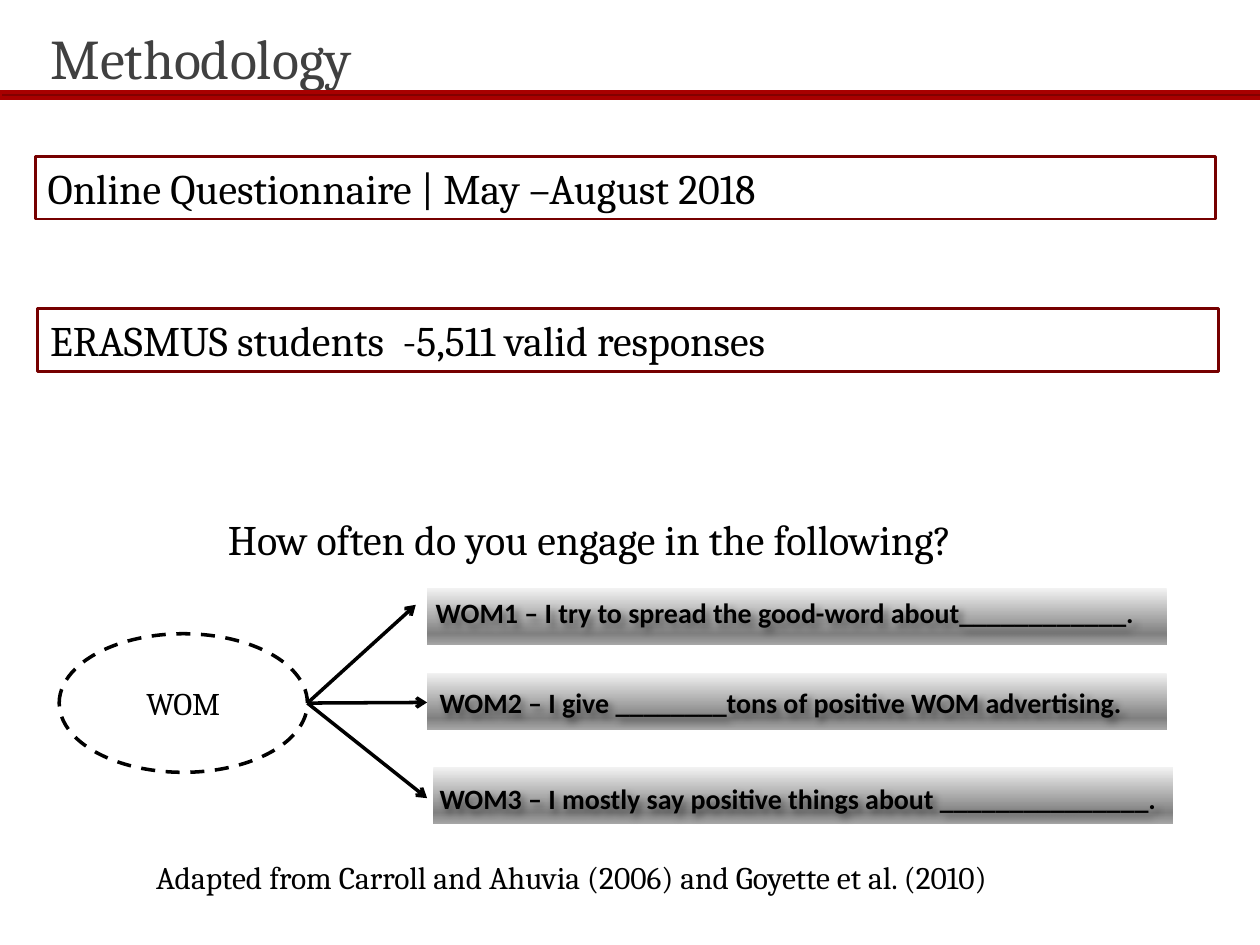
from pptx import Presentation
from pptx.dml.color import RGBColor
from pptx.enum import dml, shapes, text
from pptx.oxml import parse_xml
from pptx.oxml.ns import nsdecls, qn
from pptx.util import Inches, Pt

COLORS = {"black": "000000", "white": "FFFFFF", "title": "404040", "rule": "820000",
          "rule_line": "A80000", "frame": "760000", "shadow": "000000"}
BAR_STOPS = [(0, "F2F2F2"), (80, "808080"), (100, "A6A6A6")]

TITLE = ("Methodology", (0.3, 0.14, 2.72, 0.64))
FACTS = [
    ("Online Questionnaire | May –August 2018", 0.28, 1.24),
    ("ERASMUS students  -5,511 valid responses", 0.3, 2.45),
]
QUESTION = ("How often do you engage in the following?", (1.71, 4.03, 6.72, 0.5))
CITATION = ("Adapted from Carroll and Ahuvia (2006) and Goyette et al. (2010)", (1.14, 6.76, 7.27, 0.4))
CONSTRUCT = ("WOM", (0.47, 5.03, 1.97, 1.1))
ITEMS = [
    ("WOM1 – I try to spread the good-word about____________.", (3.39, 4.67), (3.36, 4.68, 5.88, 0.37)),
    ("WOM2 – I give ________tons of positive WOM advertising.", (3.39, 5.34), (3.39, 5.39, 5.69, 0.37)),
    ("WOM3 – I mostly say positive things about _______________.", (3.44, 6.09), (3.39, 6.15, 5.97, 0.37)),
]
FIRST_ARROW_END = (3.3, 4.8)


def rgb(name):
    return RGBColor.from_string(COLORS[name])


def write(sp, words, size, font="Cambria", color="black", bold=False, wrap=False,
          align=text.PP_ALIGN.LEFT, anchor=text.MSO_ANCHOR.TOP):
    tf = sp.text_frame
    tf.word_wrap = wrap
    tf.vertical_anchor = anchor
    p = tf.paragraphs[0]
    p.text = words
    p.alignment = align
    p.font.name, p.font.size, p.font.bold = font, Pt(size), bold
    p.font.color.rgb = rgb(color)


def add_text(words, box, size, **style):
    sp = slide.shapes.add_textbox(*map(Inches, box))
    write(sp, words, size, **style)
    sp.text_frame.auto_size = text.MSO_AUTO_SIZE.SHAPE_TO_FIT_TEXT
    return sp


def add_shape(kind, box, fill=None, line=None, width=1):
    sp = slide.shapes.add_shape(kind, *map(Inches, box))
    sp.shadow.inherit = False
    if fill:
        sp.fill.solid()
        sp.fill.fore_color.rgb = rgb(fill)
    else:
        sp.fill.background()
    if line:
        sp.line.color.rgb = rgb(line)
        sp.line.width = Pt(width)
    else:
        sp.line.fill.background()
    return sp


def shade(sp):
    sp.fill.gradient()
    sp.fill.gradient_angle = 270
    stops = sp._element.spPr.find(qn("a:gradFill")).find(qn("a:gsLst"))
    for old in list(stops):
        stops.remove(old)
    for pos, color in BAR_STOPS:
        stops.append(parse_xml(
            f'<a:gs {nsdecls("a")} pos="{pos * 1000}"><a:srgbClr val="{color}"/></a:gs>'))


def add_text_shadow(sp):
    sp._element.spPr.append(parse_xml(
        f'<a:effectLst {nsdecls("a")}><a:outerShdw blurRad="50800" dist="38100" dir="2700000">'
        f'<a:srgbClr val="{COLORS["shadow"]}"><a:alpha val="40000"/></a:srgbClr>'
        '</a:outerShdw></a:effectLst>'))


def add_arrow(start, end):
    line = slide.shapes.add_connector(shapes.MSO_CONNECTOR.STRAIGHT, *map(Inches, start + end))
    line.line.color.rgb = rgb("black")
    line.line.width = Pt(2)
    line.line._get_or_add_ln().append(parse_xml(f'<a:tailEnd {nsdecls("a")} type="arrow"/>'))
    line._element.spPr.append(parse_xml(f'<a:effectLst {nsdecls("a")}/>'))
    return line


prs = Presentation()
prs.slide_width, prs.slide_height = Inches(10), Inches(7.5)
slide = prs.slides.add_slide(prs.slide_layouts[5])
RECT = shapes.MSO_SHAPE.RECTANGLE

title = slide.shapes.title
title.left, title.top, title.width, title.height = map(Inches, TITLE[1])
write(title, TITLE[0], 32, color="title")
title.text_frame.auto_size = text.MSO_AUTO_SIZE.SHAPE_TO_FIT_TEXT
add_shape(RECT, (0, 0.73, 10.12, 0.05), "rule", "rule_line", 2)

x, y, w, h = CONSTRUCT[1]
oval = add_shape(shapes.MSO_SHAPE.OVAL, CONSTRUCT[1], "white", "black", 2)
oval.line.dash_style = dml.MSO_LINE.DASH
write(oval, CONSTRUCT[0], 18, wrap=True, align=text.PP_ALIGN.CENTER, anchor=text.MSO_ANCHOR.MIDDLE)
tf = oval.text_frame
tf.margin_left = tf.margin_right = tf.margin_top = tf.margin_bottom = 0

add_text(*QUESTION, 24, wrap=True)
origin = (x + w, y + h / 2)
for i, (words, corner, box) in enumerate(ITEMS):
    shade(add_shape(RECT, corner + (5.87, 0.45)))
    label = add_text(words, box, 16, font="Calibri", bold=True)
    add_text_shadow(label)
    if i == 0:
        add_arrow(origin, FIRST_ARROW_END)
    else:
        add_arrow(origin, (box[0], box[1] + box[3] / 2)).end_connect(label, 1)

add_text(*CITATION, 18)
for words, left, top in FACTS:
    frame = add_shape(RECT, (left, top, 9.37, 0.5), line="frame", width=1.5)
    write(frame, words, 24, wrap=True, align=text.PP_ALIGN.JUSTIFY)
    frame.text_frame.auto_size = text.MSO_AUTO_SIZE.SHAPE_TO_FIT_TEXT

prs.save("out.pptx")
